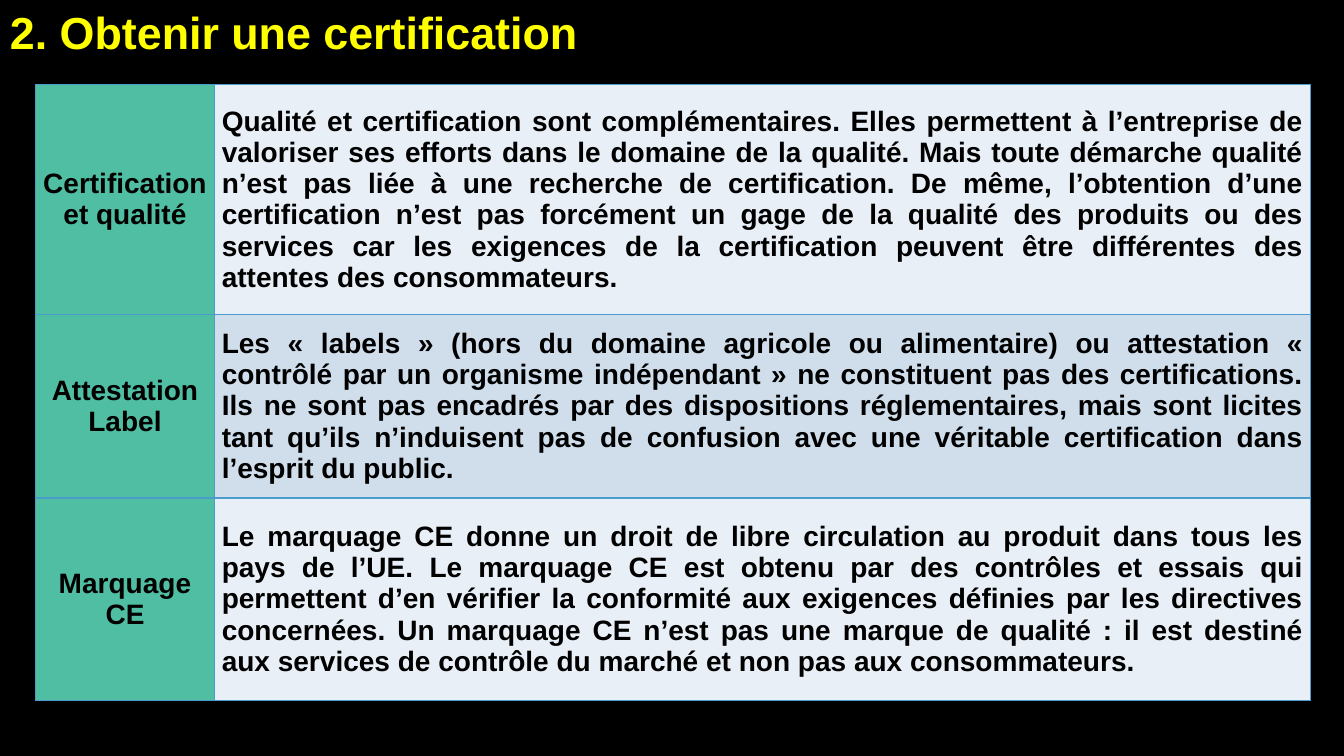
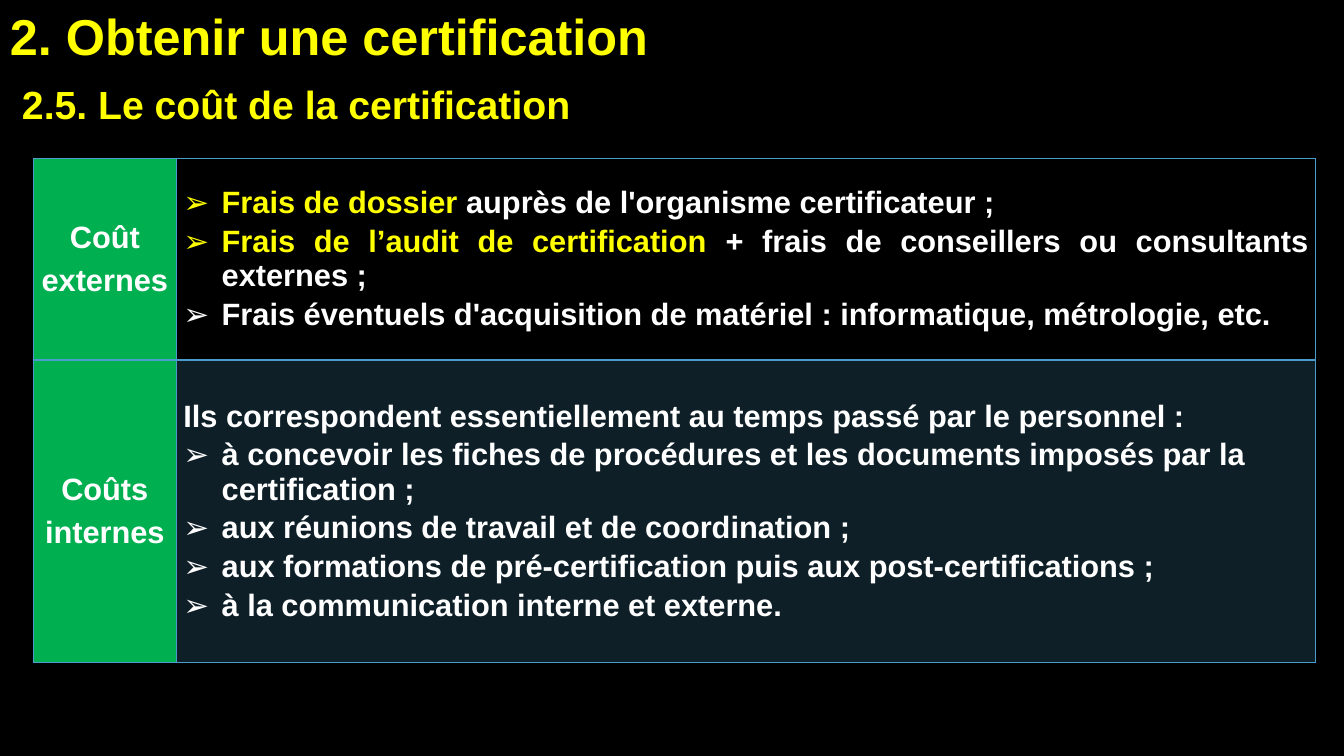
from dataclasses import dataclass

from lxml.etree import SubElement
from pptx import Presentation
from pptx.dml.color import RGBColor
from pptx.enum.text import MSO_ANCHOR, MSO_AUTO_SIZE, PP_ALIGN
from pptx.oxml import parse_xml
from pptx.oxml.ns import nsdecls, qn
from pptx.util import Inches, Pt


@dataclass(frozen=True)
class Theme:
    font: str = "Arial"
    background: str = "000000"
    heading: str = "FFFF00"
    dark_text: str = "000000"
    light_text: str = "FFFFFF"
    border: str = "4A9CCC"
    teal: str = "50BEA3"
    green: str = "00B050"
    pale: str = "E9EFF6"
    pale_blue: str = "D0DEEC"
    subtitle_size: int = 28
    bullet_indent: float = 0.38
    cell_margin: float = 0.07


THEME = Theme()

# Paragraph formats, by role
FORMATS = {
    "title": {"space_before": Pt(3), "space_after": Pt(3)},
    "subtitle": {},
    "label": {"alignment": PP_ALIGN.CENTER, "space_before": Pt(6)},
    "label_next": {"alignment": PP_ALIGN.CENTER},
    "body": {"alignment": PP_ALIGN.JUSTIFY, "space_before": Pt(3), "space_after": Pt(3)},
    "intro": {"space_after": Pt(3)},
    "bullet": {"space_after": Pt(3)},
    "bullet_justified": {"alignment": PP_ALIGN.JUSTIFY, "space_after": Pt(3)},
}

# Content: a paragraph is (format, text, highlighted opening words if any)
SLIDES = [
    {
        "title_size": 32,
        "title_height": 0.64,
        "table": {
            "position": (0.35, 0.84),
            "columns": (1.78, 10.87),
            "text_size": 20,
            "text_color": THEME.dark_text,
            "label_fill": THEME.teal,
            "rows": [
                {
                    "height": 2.28,
                    "fill": THEME.pale,
                    "label": [("label", "Certification et qualité")],
                    "body": [("body", "Qualité et certification sont complémentaires. Elles permettent à l’entreprise de valoriser ses efforts dans le domaine de la qualité. Mais toute démarche qualité n’est pas liée à une recherche de certification. De même, l’obtention d’une certification n’est pas forcément un gage de la qualité des produits ou des services car les exigences de la certification peuvent être différentes des attentes des consommateurs.")],
                },
                {
                    "height": 1.82,
                    "fill": THEME.pale_blue,
                    "label": [("label", "Attestation"), ("label_next", "Label")],
                    "body": [("body", "Les « labels » (hors du domaine agricole ou alimentaire) ou attestation « contrôlé par un organisme indépendant » ne constituent pas des certifications. Ils ne sont pas encadrés par des dispositions réglementaires, mais sont licites tant qu’ils n’induisent pas de confusion avec une véritable certification dans l’esprit du public.")],
                },
                {
                    "height": 2.01,
                    "fill": THEME.pale,
                    "label": [("label", "Marquage CE")],
                    "body": [("body", "Le marquage CE donne un droit de libre circulation au produit dans tous les pays de l’UE. Le marquage CE est obtenu par des contrôles et essais qui permettent d’en vérifier la conformité aux exigences définies par les directives concernées. Un marquage CE n’est pas une marque de qualité : il est destiné aux services de contrôle du marché et non pas aux consommateurs.")],
                },
            ],
        },
    },
    {
        "title_size": 36,
        "title_height": 0.71,
        "subtitle": "2.5. Le coût de la certification",
        "table": {
            "position": (0.33, 1.57),
            "columns": (1.42, 11.3),
            "text_size": 22,
            "text_color": THEME.light_text,
            "label_fill": THEME.green,
            "rows": [
                {
                    "height": 2,
                    "fill": None,
                    "bottom_border": 2,
                    "label": [("label", "Coût"), ("label", "externes")],
                    "body": [
                        ("bullet_justified", "auprès de l'organisme certificateur ;", "Frais de dossier "),
                        ("bullet_justified", " + frais de conseillers ou consultants externes ;", "Frais de l’audit de certification"),
                        ("bullet_justified", "Frais éventuels d'acquisition de matériel : informatique, métrologie, etc."),
                    ],
                },
                {
                    "height": 3,
                    "fill": THEME.border,
                    "opacity": 20,
                    "label": [("label", "Coûts"), ("label", "internes")],
                    "body": [
                        ("intro", "Ils correspondent essentiellement au temps passé par le personnel :"),
                        ("bullet", "à concevoir les fiches de procédures et les documents imposés par la certification ;"),
                        ("bullet", "aux réunions de travail et de coordination ;"),
                        ("bullet", "aux formations de pré-certification puis aux post-certifications ;"),
                        ("bullet", "à la communication interne et externe."),
                    ],
                },
            ],
        },
    },
]
TITLE = "2. Obtenir une certification"


# Text
def add_run(paragraph, text, size, color):
    run = paragraph.add_run()
    run.text = text
    values = {"name": THEME.font, "size": Pt(size), "bold": True}
    for name, value in values.items():
        setattr(run.font, name, value)
    run.font.color.rgb = RGBColor.from_string(color)


def add_bullet(paragraph):
    properties = paragraph._p.get_or_add_pPr()
    indent = Inches(THEME.bullet_indent)
    properties.set("marL", str(indent))
    properties.set("indent", str(-indent))
    SubElement(properties, qn("a:buFont"), typeface=THEME.font)
    SubElement(properties, qn("a:buChar"), char="➢")


def write_paragraphs(text_frame, paragraphs, size, color):
    for index, (role, text, *highlights) in enumerate(paragraphs):
        paragraph = text_frame.add_paragraph() if index else text_frame.paragraphs[0]
        for name, value in FORMATS[role].items():
            setattr(paragraph, name, value)
        if role.startswith("bullet"):
            add_bullet(paragraph)
        for highlight in highlights:
            add_run(paragraph, highlight, size, THEME.heading)
        add_run(paragraph, text, size, color)


def add_heading(slide, role, text, box, size, wrap):
    shape = slide.shapes.add_textbox(*map(Inches, box))
    shape.text_frame.word_wrap = wrap
    shape.text_frame.auto_size = MSO_AUTO_SIZE.SHAPE_TO_FIT_TEXT
    write_paragraphs(shape.text_frame, [(role, text)], size, THEME.heading)


# Table
def fill_cell(cell, color, opacity=None):
    if color is None:
        cell.fill.background()
        return
    cell.fill.solid()
    cell.fill.fore_color.rgb = RGBColor.from_string(color)
    if opacity is not None:
        color_element = next(cell._tc.tcPr.iter(qn("a:srgbClr")))
        SubElement(color_element, qn("a:alpha"), val=str(opacity * 1000))


def border_cell(cell, bottom_width):
    widths = {"lnL": 1, "lnR": 1, "lnT": 1, "lnB": bottom_width}
    properties = cell._tc.get_or_add_tcPr()
    for position, (side, width) in enumerate(widths.items()):
        properties.insert(position, parse_xml(
            f'<a:{side} {nsdecls("a")} w="{Pt(width)}"><a:solidFill>'
            f'<a:srgbClr val="{THEME.border}"/></a:solidFill></a:{side}>'))


def add_content_table(slide, content):
    rows, columns = content["rows"], content["columns"]
    size = sum(columns), sum(row["height"] for row in rows)
    box = map(Inches, (*content["position"], *size))
    table = slide.shapes.add_table(len(rows), len(columns), *box).table
    table.first_row = table.horz_banding = False
    for column, width in zip(table.columns, columns):
        column.width = Inches(width)
    cell_format = {
        "vertical_anchor": MSO_ANCHOR.MIDDLE,
        "margin_left": Inches(THEME.cell_margin),
        "margin_right": Inches(THEME.cell_margin),
        "margin_top": 0,
        "margin_bottom": 0,
    }
    for table_row, row in zip(table.rows, rows):
        table_row.height = Inches(row["height"])
        label_cell, body_cell = table_row.cells
        fill_cell(label_cell, content["label_fill"])
        fill_cell(body_cell, row["fill"], row.get("opacity"))
        for cell, part in ((label_cell, "label"), (body_cell, "body")):
            for name, value in cell_format.items():
                setattr(cell, name, value)
            border_cell(cell, row.get("bottom_border", 1))
            write_paragraphs(cell.text_frame, row[part], content["text_size"], content["text_color"])


# Slides
def add_content_slide(presentation, content):
    slide = presentation.slides.add_slide(presentation.slide_layouts[6])
    slide.background.fill.solid()
    slide.background.fill.fore_color.rgb = RGBColor.from_string(THEME.background)
    title_box = (0, 0, 7.88, content["title_height"])
    add_heading(slide, "title", TITLE, title_box, content["title_size"], True)
    add_content_table(slide, content["table"])
    if "subtitle" in content:
        add_heading(slide, "subtitle", content["subtitle"], (0.12, 0.75, 5.7, 0.57),
                    THEME.subtitle_size, False)


def main():
    presentation = Presentation()
    presentation.slide_width, presentation.slide_height = Inches(13.33), Inches(7.5)
    for content in SLIDES:
        add_content_slide(presentation, content)
    presentation.save("out.pptx")


if __name__ == "__main__":
    main()
